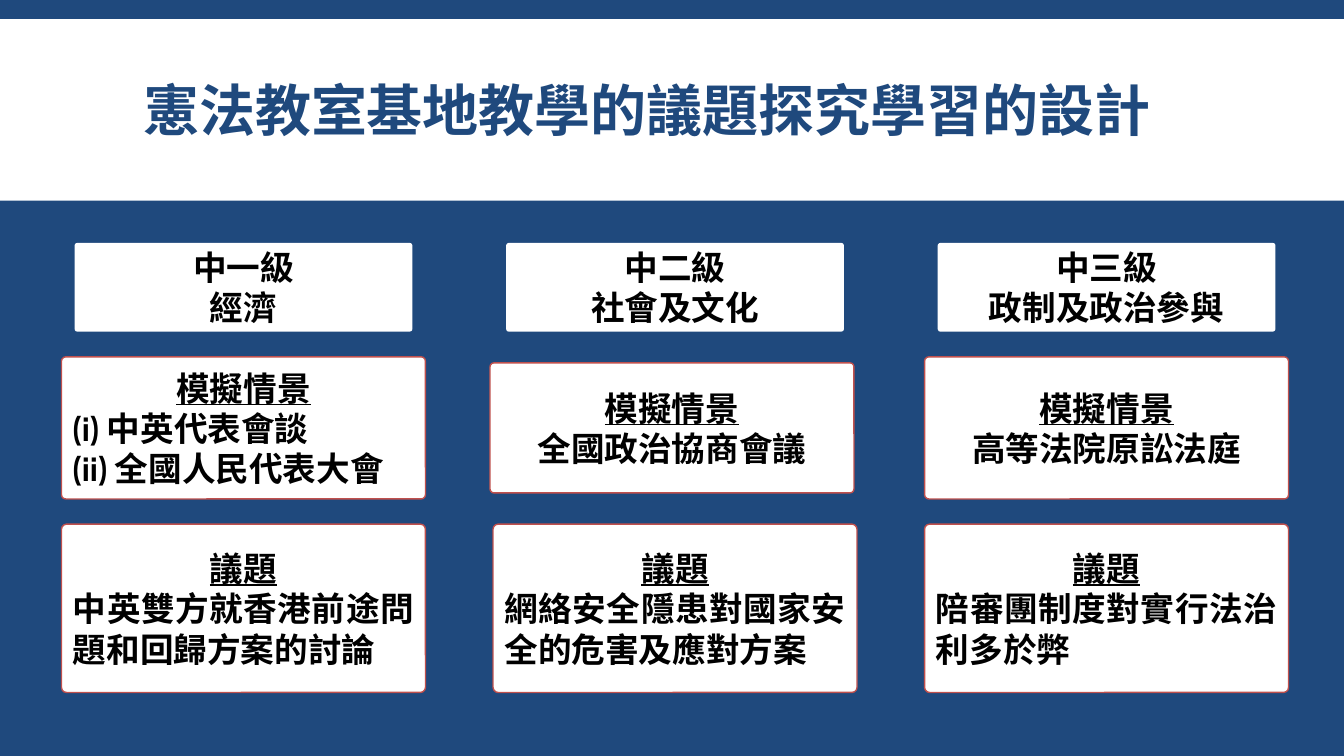
import dataclasses

import lxml.etree
import pptx
import pptx.dml.color
import pptx.enum.shapes
import pptx.enum.text
import pptx.oxml.ns
import pptx.util

Inches = pptx.util.Inches
Pt = pptx.util.Pt
Rgb = pptx.dml.color.RGBColor.from_string
Shape = pptx.enum.shapes.MSO_SHAPE
Align = pptx.enum.text.PP_ALIGN
MIDDLE = pptx.enum.text.MSO_ANCHOR.MIDDLE


@dataclasses.dataclass(frozen=True)
class Theme:
    navy: str = "1F497D"
    white: str = "FFFFFF"
    red: str = "C0504D"
    black: str = "000000"
    face: str = "Cabin"
    head: int = 40
    body: int = 24


THEME = Theme()
WIDE, HIGH = 13.33, 7.5

# Columns: left edge, pitch and card width; level cards are narrower by INSET a side.
LEFT, PITCH, WIDTH, INSET = 0.61, 4.28, 3.61, 0.13
# Rows: top and height.
LEVEL, SCENE, ISSUE = (2.41, 0.88), (3.54, 1.41), (5.2, 1.67)
# The middle scene card is a little shorter and further left.
SHIFT, TRIM = 0.03, 0.06

LEVELS = [
    ("中一級", "經濟"),
    ("中二級", "社會及文化"),
    ("中三級", "政制及政治參與"),
]
SCENES = [
    (Align.JUSTIFY, ["(i) 中英代表會談", "(ii) 全國人民代表大會"]),
    (Align.CENTER, ["全國政治協商會議"]),
    (Align.CENTER, ["高等法院原訟法庭"]),
]
ISSUES = [
    "中英雙方就香港前途問題和回歸方案的討論",
    "網絡安全隱患對國家安全的危害及應對方案",
    "陪審團制度對實行法治利多於弊",
]


def style(item, values):
    for name, value in values.items():
        setattr(item, name, value)


def place(shape, left, top, width, height):
    style(shape, {"left": Inches(left), "top": Inches(top),
                  "width": Inches(width), "height": Inches(height)})


def write(para, text, size, color, align, under=False):
    para.alignment = align
    run = para.add_run()
    run.text = text
    style(run.font, {"name": THEME.face, "size": Pt(size),
                     "bold": True, "underline": under})
    run.font.color.rgb = Rgb(color)
    # East Asian text takes its face from its own element.
    east = lxml.etree.SubElement(run._r.get_or_add_rPr(), pptx.oxml.ns.qn("a:ea"))
    east.set("typeface", THEME.face)


def block(slide, kind, box, edge=None):
    shape = slide.shapes.add_shape(kind, *map(Inches, box))
    shape.shadow.inherit = False
    shape.fill.solid()
    shape.fill.fore_color.rgb = Rgb(THEME.white)
    if edge:
        shape.line.color.rgb = Rgb(edge)
        shape.line.width = Pt(1)
    else:
        shape.line.fill.background()
    return shape


def card(slide, box, lines, edge=None):
    """Add a rounded card; each line is (text, alignment, underlined)."""
    shape = block(slide, Shape.ROUNDED_RECTANGLE, box, edge)
    shape.adjustments[0] = 0.03
    frame = shape.text_frame
    style(frame, {"word_wrap": True, "vertical_anchor": MIDDLE})
    for row, (text, align, under) in enumerate(lines):
        para = frame.add_paragraph() if row else frame.paragraphs[0]
        write(para, text, THEME.body, THEME.black, align, under)


def banner(slide, text):
    title = slide.shapes.title
    band = block(slide, Shape.RECTANGLE, (0, 0.19, WIDE, 1.8))
    title._element.addprevious(band._element)
    place(title, 1.32, 0.31, 10.7, 1.65)
    style(title.text_frame, {"word_wrap": True, "vertical_anchor": MIDDLE})
    para = title.text_frame.paragraphs[0]
    para.line_spacing = 0.85
    write(para, text, THEME.head, THEME.navy, Align.LEFT)


def column(slide, col):
    left = LEFT + col * PITCH
    level = [(text, Align.CENTER, False) for text in LEVELS[col]]
    card(slide, (left + INSET, LEVEL[0], WIDTH - 2 * INSET, LEVEL[1]), level)

    align, texts = SCENES[col]
    scene = [("模擬情景", Align.CENTER, True)]
    scene += [(text, align, False) for text in texts]
    shift, trim = (SHIFT, TRIM) if col == 1 else (0, 0)
    box = (left - shift, SCENE[0] + trim, WIDTH, SCENE[1] - 2 * trim)
    card(slide, box, scene, THEME.red)

    issue = [("議題", Align.CENTER, True), (ISSUES[col], Align.JUSTIFY, False)]
    card(slide, (left, ISSUE[0], WIDTH, ISSUE[1]), issue, THEME.red)


def main():
    deck = pptx.Presentation()
    style(deck, {"slide_width": Inches(WIDE), "slide_height": Inches(HIGH)})
    slide = deck.slides.add_slide(deck.slide_layouts[5])
    slide.background.fill.solid()
    slide.background.fill.fore_color.rgb = Rgb(THEME.navy)
    banner(slide, "憲法教室基地教學的議題探究學習的設計")
    for col in range(len(LEVELS)):
        column(slide, col)
    deck.save("out.pptx")


if __name__ == "__main__":
    main()
